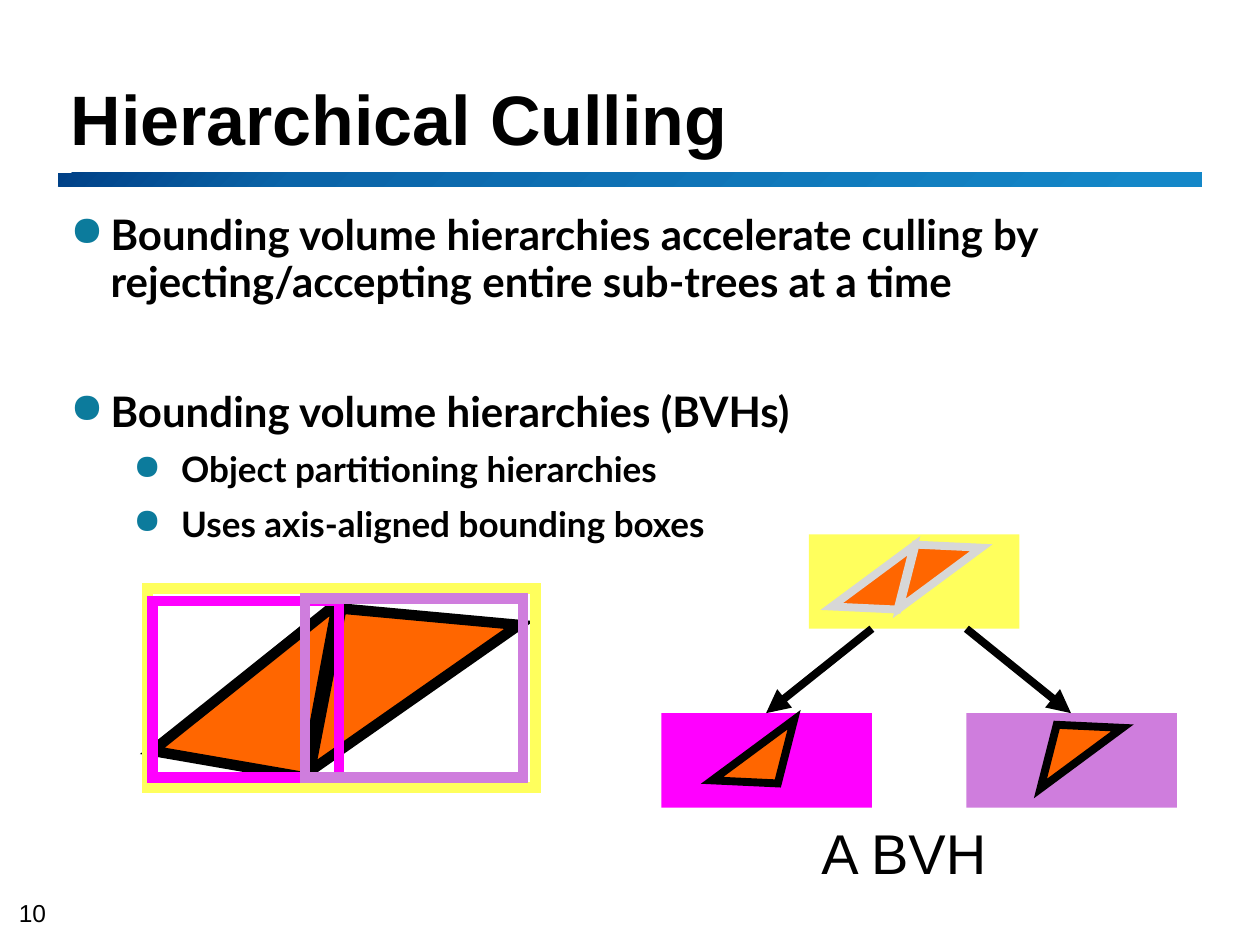
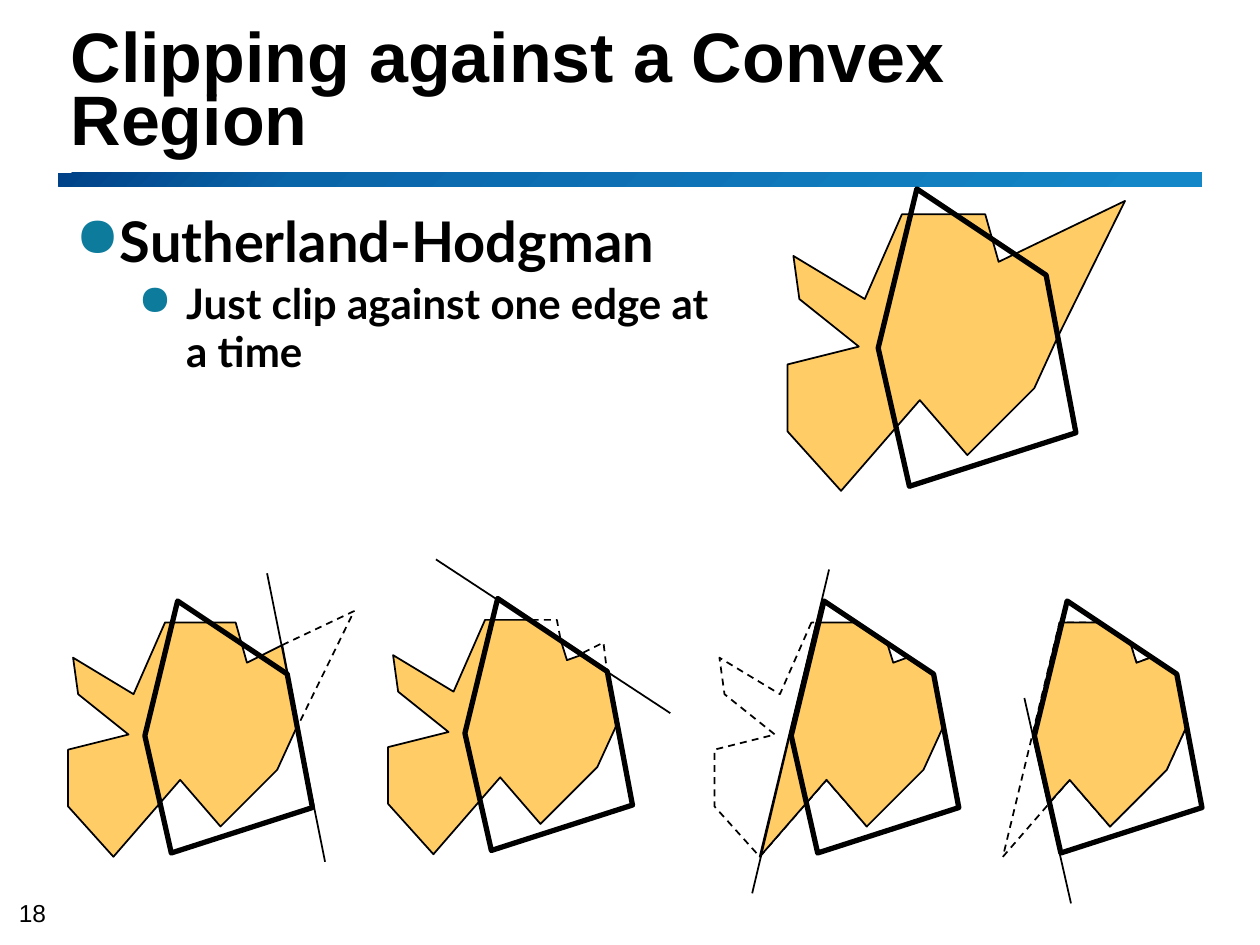
"""Builds two slides on culling and clipping."""
import copy
import dataclasses

import pptx
import pptx.dml.color
import pptx.enum.dml
import pptx.enum.shapes
import pptx.enum.text
import pptx.oxml
import pptx.oxml.ns
import pptx.util
from pptx.util import Inches, Pt

SHAPE = pptx.enum.shapes.MSO_SHAPE
ANCHOR = pptx.enum.text.MSO_ANCHOR
qn = pptx.oxml.ns.qn


@dataclasses.dataclass(frozen=True)
class Theme:
    """Colours, fonts and type sizes."""
    ink: str = "000000"
    dot: str = "0C7B9C"
    flame: str = "FF6600"
    sand: str = "FFCC66"
    yellow: str = "FFFF5D"
    pink: str = "FF00FF"
    mauve: str = "CF7DDD"
    grey: str = "D7D7D7"
    band: tuple = ((0, "004187"), (0.21, "0A64A8"), (0.96, "1487C8"))
    head: str = "Arial"
    body: str = "Lato"
    title: int = 40
    large: int = 32
    mid: int = 24
    small: int = 20
    foot: int = 14
    lead: int = 27


def rgb(code):
    """Turn a hex code into a colour."""
    return pptx.dml.color.RGBColor.from_string(code)


def element(tag, **attrs):
    """Make one drawing element."""
    node = pptx.oxml.parse_xml(f"<a:{tag} {pptx.oxml.ns.nsdecls('a')}/>")
    for key, value in attrs.items():
        node.set(key, value)
    return node


class Deck:
    """Holds the theme and the current slide."""

    def __init__(self, theme):
        """Start an empty deck."""
        self.theme = theme
        self.show = pptx.Presentation()
        self.show.slide_width, self.show.slide_height = Inches(10), Inches(7.5)

    def page(self, title, number):
        """Add a slide with title, band and number."""
        self.slide = self.show.slides.add_slide(self.show.slide_layouts[5])
        look = self.theme
        self.text(0.15, 7.13, 0.34, 0.23, str(number), look.foot, 0, ANCHOR.BOTTOM)
        band = self.shape(SHAPE.RECTANGLE, 0.46, 1.37, 9.08, 0.11)
        band.fill.gradient()
        band.fill.gradient_angle = 315
        stops = band._element.spPr.find(".//" + qn("a:gsLst"))
        stops.insert(1, copy.deepcopy(stops[0]))
        for stop, (place, code) in zip(band.fill.gradient_stops, look.band):
            stop.position = place
            stop.color.rgb = rgb(code)
        box = self.slide.shapes.title
        self.place(box, 0.46, 0.33, 9.06, 0.99)
        frame = box.text_frame
        frame.text = title
        frame.auto_size = pptx.enum.text.MSO_AUTO_SIZE.NONE
        frame.vertical_anchor = ANCHOR.BOTTOM
        par = frame.paragraphs[0]
        par.alignment = pptx.enum.text.PP_ALIGN.LEFT
        par.line_spacing = Pt(36)
        self.font(par, look.head, look.title, True)

    def place(self, box, left, top, width, height):
        """Move and size a box."""
        box.left, box.top = Inches(left), Inches(top)
        box.width, box.height = Inches(width), Inches(height)

    def font(self, par, name, size, bold=False):
        """Format the runs of a paragraph."""
        for run in par.runs:
            run.font.name, run.font.size, run.font.bold = name, Pt(size), bold
            run.font.color.rgb = rgb(self.theme.ink)

    def frame(self, left, top, width, height):
        """Add a text box and give its frame."""
        spot = map(Inches, (left, top, width, height))
        return self.slide.shapes.add_textbox(*spot).text_frame

    def text(self, left, top, width, height, words, size, inset=0.1, anchor=ANCHOR.TOP):
        """Add one line of plain text."""
        frame = self.frame(left, top, width, height)
        frame.text = words
        frame.word_wrap = False
        frame.vertical_anchor = anchor
        frame.margin_left = frame.margin_right = Inches(inset)
        frame.margin_top = frame.margin_bottom = Inches(inset / 2)
        self.font(frame.paragraphs[0], self.theme.head, size)

    def bullets(self, left, top, width, height, items):
        """Add bullets given as level, size, space before and words."""
        frame = self.frame(left, top, width, height)
        frame.word_wrap = True
        for index, (level, size, before, words) in enumerate(items):
            par = frame.add_paragraph() if index else frame.paragraphs[0]
            par.text = words
            par.level = level
            par.line_spacing = Pt(self.theme.lead)
            par.space_before, par.space_after = Pt(before), Pt(4)
            props = par._p.get_or_add_pPr()
            margin, hang = ((0.32, 0.32), (0.88, 0.38))[level]
            props.set("marL", str(Inches(margin)))
            props.set("indent", str(-Inches(hang)))
            tint = element("buClr")
            tint.append(element("srgbClr", val=self.theme.dot))
            props.append(tint)
            props.append(element("buChar", char="●"))
            self.font(par, self.theme.body, size, True)

    def paint(self, item, fill, line, width, dash=False, sharp=False):
        """Set fill, outline and shadow of a shape."""
        item.shadow.inherit = False
        if fill:
            item.fill.solid()
            item.fill.fore_color.rgb = rgb(fill)
        else:
            item.fill.background()
        self.stroke(item, line, width, dash)
        if line and sharp:
            item._element.spPr.find(qn("a:ln")).append(element("miter", lim="800000"))

    def stroke(self, item, line, width, dash=False):
        """Set the outline of a shape or connector."""
        if not line:
            item.line.fill.background()
            return
        item.line.color.rgb = rgb(line)
        item.line.width = Pt(width)
        if dash:
            item.line.dash_style = pptx.enum.dml.MSO_LINE.DASH

    def shape(self, kind, left, top, width, height, fill=None, line=None, stroke=1, turn=0):
        """Add a preset shape."""
        spot = map(Inches, (left, top, width, height))
        item = self.slide.shapes.add_shape(kind, *spot)
        item.rotation = turn
        self.paint(item, fill, line, stroke, sharp=True)
        return item

    def poly(self, points, fill=None, width=1, dash=False, close=True, sharp=False):
        """Add an outline through points."""
        spots = [(Inches(x), Inches(y)) for x, y in points]
        build = self.slide.shapes.build_freeform(*spots[0])
        build.add_line_segments(spots[1:], close=close)
        self.paint(build.convert_to_shape(), fill, self.theme.ink, width, dash, sharp)

    def line(self, start, end, width=1, arrow=False):
        """Add a straight line, with an arrowhead if asked."""
        kind = pptx.enum.shapes.MSO_CONNECTOR.STRAIGHT
        item = self.slide.shapes.add_connector(kind, *map(Inches, (*start, *end)))
        self.stroke(item, self.theme.ink, width)
        props = item._element.spPr
        if arrow:
            props.find(qn("a:ln")).append(element("tailEnd", type="triangle"))
        props.append(element("effectLst"))


ARMS = [(0.16, 0.17), (-0.09, 0.74), (-0.57, 0.45), (-0.53, 0.74),
        (-0.13, 1.06), (-0.61, 1.18), (-0.61, 1.63)]
FOOT = [(-0.25, 2.03)]
BASE = [(0.28, 1.42), (0.6, 1.79), (1.05, 1.34), (1.21, 0.99)]
TIP = [(1.66, 0.08)]
NOTCH = [(0.81, 0.49), (0.72, 0.17)]
TRIM = [(1.13, 0.58), (0.92, 0.45), (0.81, 0.49), (0.76, 0.33), (0.52, 0.17)]
WINDOW = [(1.13, 0.58), (1.33, 1.64), (0.21, 2), (0, 1.07), (0.26, 0)]
LEFT = ARMS + FOOT + BASE
THIRD = FOOT + BASE + TRIM + [(0.2, 0.17)]
STEPS = [
    ((1.15, 4.77), LEFT + [(1.09, 0.35)] + NOTCH,
     [(1.09, 0.35)] + TIP + [(1.21, 1)], False, [(0.97, -0.22), (1.43, 2.07)]),
    ((3.69, 4.75), LEFT + TRIM,
     [(0.53, 0.17), (0.73, 0.17), (0.76, 0.33), (0.92, 0.44), (1.1, 0.35), (1.13, 0.6)],
     False, [(-0.23, -0.31), (1.63, 0.91)]),
    ((6.28, 4.77), THIRD, ARMS + FOOT + BASE[:2] + [(0.21, 0.17)], True,
     [(0.3, -0.25), (-0.31, 2.32)]),
    ((8.21, 4.77), [(0.11, 1.61)] + THIRD[1:] + [(-0.01, 1.07)], THIRD, True,
     [(-0.08, 0.77), (0.29, 2.4)]),
]


def shift(points, start, scale=1):
    """Scale points and move them to a start."""
    return [(start[0] + x * scale, start[1] + y * scale) for x, y in points]


def culling(deck):
    """Draw the culling slide."""
    look = deck.theme
    deck.page("Hierarchical Culling", 10)
    deck.bullets(0.46, 1.63, 9.1, 3, [
        (0, look.mid, 0, "Bounding volume hierarchies accelerate culling by "
                         "rejecting/accepting entire sub-trees at a time"),
        (0, look.mid, 43, "Bounding volume hierarchies (BVHs)"),
        (1, look.small, 0, "Object partitioning hierarchies"),
        (1, look.small, 0, "Uses axis-aligned bounding boxes")])
    for points in ([(2.65, 4.81), (1.21, 5.96), (2.42, 6.17), (2.67, 4.83)],
                   [(2.71, 4.83), (2.46, 6.12), (4.12, 4.96)]):
        deck.poly(points, look.flame, 6, sharp=True)
    for spot, tint in (((1.17, 4.67, 3.08, 1.58), look.yellow),
                       ((1.21, 4.77, 1.48, 1.4), look.pink),
                       ((2.42, 4.75, 1.73, 1.42), look.mauve)):
        deck.shape(SHAPE.RECTANGLE, *spot, line=tint, stroke=6)
    deck.text(6.42, 6.45, 1.59, 0.63, "A BVH", look.large)
    for left, top, tint in ((6.42, 4.24, look.yellow), (5.25, 5.66, look.pink),
                            (7.67, 5.66, look.mauve)):
        deck.shape(SHAPE.RECTANGLE, left, top, 1.67, 0.75, tint)
    for start, end in ((6.92, 6.08), (7.67, 8.5)):
        deck.line((start, 4.99), (end, 5.66), 4.5, True)
    for left, top, turn, tint in ((6.62, 4.54, 143.5, look.grey), (6.96, 4.29, 323.5, look.grey),
                                  (5.67, 5.92, 143.5, look.ink), (8.08, 5.72, 323.5, look.ink)):
        deck.shape(SHAPE.ISOSCELES_TRIANGLE, left, top, 0.81, 0.33, look.flame, tint, 4.5, turn)


def clipping(deck):
    """Draw the clipping slide."""
    look = deck.theme
    deck.page("Clipping against a Convex Region", 18)
    deck.bullets(0.5, 1.75, 5.6, 1.4, [
        (0, look.large, 0, "Sutherland-Hodgman"),
        (1, look.mid, 0, "Just clip against one edge at\va time")])
    whole, scale = (6.97, 1.5), 1.18
    deck.poly(shift(LEFT + TIP + NOTCH, whole, scale), look.sand)
    deck.poly(shift(WINDOW, whole, scale), width=3)
    for start, kept, lost, close, edge in STEPS:
        deck.poly(shift(lost, start), dash=True, close=close)
        deck.poly(shift(kept, start), look.sand)
        deck.poly(shift(WINDOW, start), width=3)
        deck.line(*shift(edge, start))


def main():
    """Build and save the deck."""
    deck = Deck(Theme())
    culling(deck)
    clipping(deck)
    deck.show.save("out.pptx")


if __name__ == "__main__":
    main()
